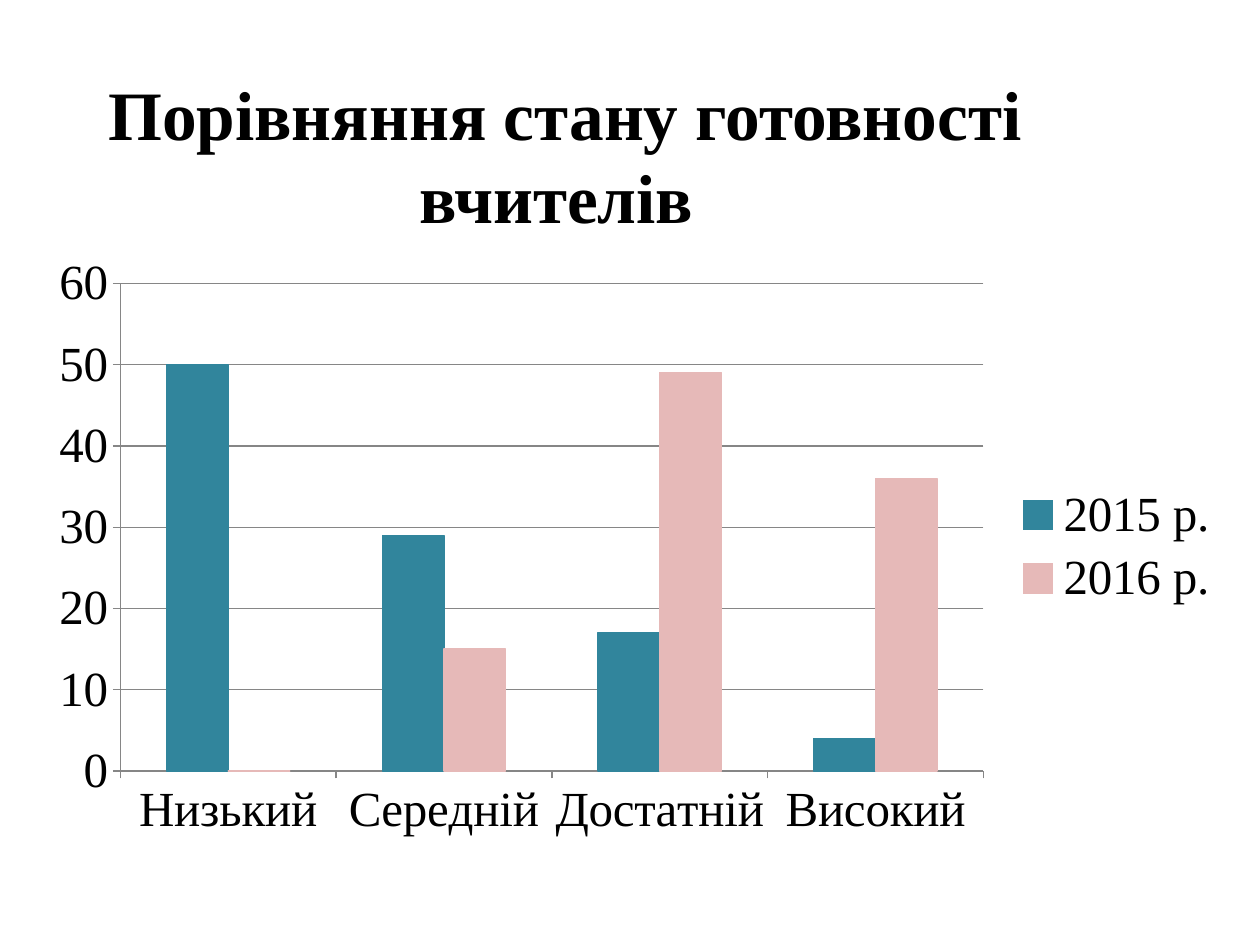
from pptx import Presentation
from pptx.chart.data import CategoryChartData
from pptx.dml.color import RGBColor
from pptx.enum.chart import XL_CHART_TYPE as ChartType
from pptx.enum.chart import XL_LEGEND_POSITION as LegendPosition
from pptx.enum.chart import XL_TICK_MARK as TickMark
from pptx.enum.text import MSO_ANCHOR as Anchor
from pptx.enum.text import PP_ALIGN as Align
from pptx.util import Inches, Pt

BLACK = RGBColor(0x00, 0x00, 0x00)
GRAY = RGBColor(0x86, 0x86, 0x86)
TEAL = RGBColor(0x31, 0x85, 0x9C)
PINK = RGBColor(0xE6, 0xB9, 0xB8)
FONT = "Times New Roman"

TITLE = "Порівняння стану готовності вчителів "
LEVELS = ["Низький", "Середній", "Достатній", "Високий"]
YEARS = [
    ("2015 р.", (50, 29, 17, 4), TEAL),
    ("2016 р.", (0, 15, 49, 36), PINK),
]


def style_font(font, size, bold=False):
    font.name = FONT
    font.size = Pt(size)
    font.bold = bold
    font.color.rgb = BLACK


def add_title(page):
    box = page.shapes.add_textbox(Inches(0.43), Inches(0.68), Inches(8.11), Inches(1.09))
    frame = box.text_frame
    frame.word_wrap = True
    frame.vertical_anchor = Anchor.MIDDLE
    frame.text = TITLE
    para = frame.paragraphs[0]
    para.alignment = Align.CENTER
    style_font(para.runs[0].font, 39.6, bold=True)


def add_readiness_chart(page):
    data = CategoryChartData()
    data.categories = LEVELS
    for name, values, _ in YEARS:
        data.add_series(name, values)
    chart = page.shapes.add_chart(
        ChartType.COLUMN_CLUSTERED,
        Inches(0.28), Inches(1.94), Inches(9.53), Inches(4.8), data,
    ).chart
    style_font(chart.font, 28)
    chart.has_title = False
    chart.has_legend = True
    chart.legend.position = LegendPosition.RIGHT
    chart.legend.include_in_layout = False

    plot = chart.plots[0]
    plot.gap_width = 150
    plot.overlap = 0
    plot.vary_by_categories = False
    for series, (_, _, color) in zip(plot.series, YEARS):
        series.format.fill.solid()
        series.format.fill.fore_color.rgb = color
        series.format.line.color.rgb = color
        series.format.line.width = Pt(0.75)

    value_axis = chart.value_axis
    value_axis.minimum_scale = 0
    value_axis.maximum_scale = 60
    value_axis.major_unit = 10
    value_axis.has_major_gridlines = True
    for axis in (chart.category_axis, value_axis):
        axis.major_tick_mark = TickMark.OUTSIDE
        axis.minor_tick_mark = TickMark.NONE
    for part in (chart.category_axis, value_axis, value_axis.major_gridlines):
        part.format.line.color.rgb = GRAY
        part.format.line.width = Pt(0.75)


def main():
    deck = Presentation()
    deck.slide_width = Inches(10)
    deck.slide_height = Inches(7.5)
    page = deck.slides.add_slide(deck.slide_layouts[6])
    add_title(page)
    add_readiness_chart(page)
    deck.save("out.pptx")


if __name__ == "__main__":
    main()
